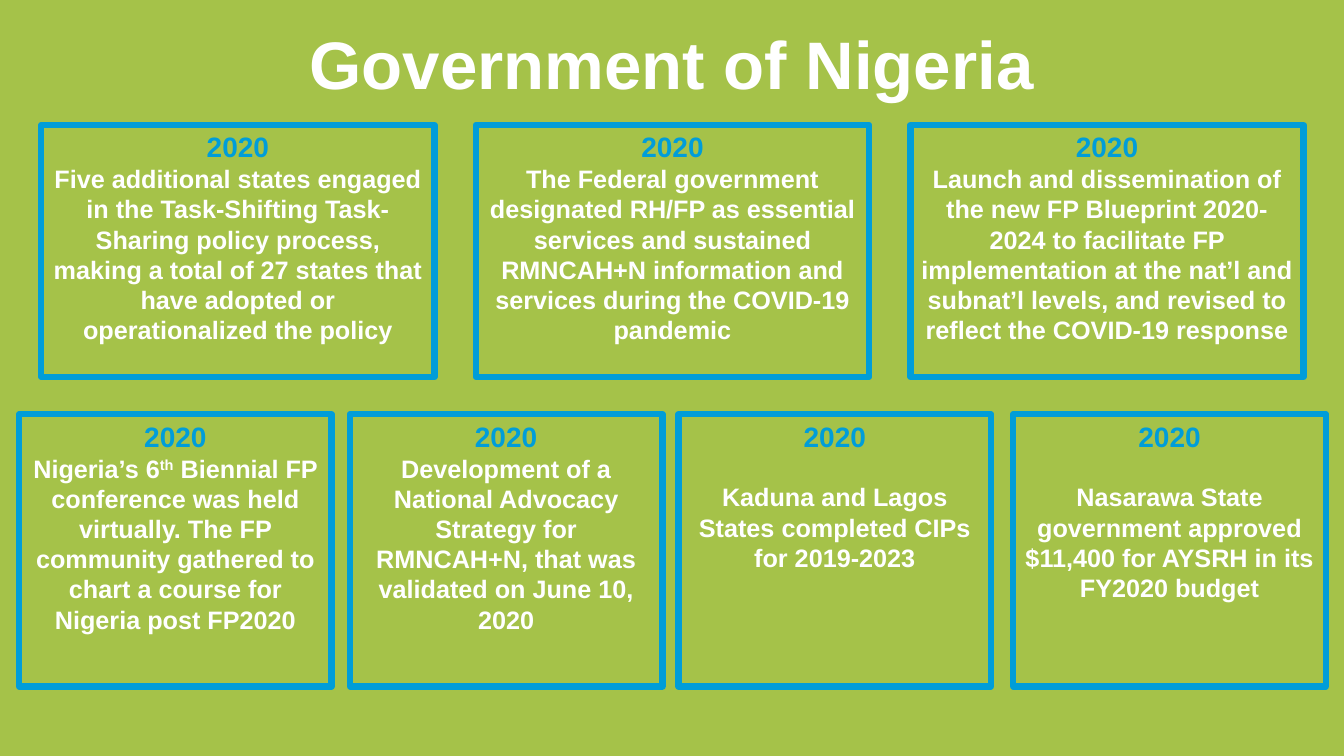
from pptx import Presentation
from pptx.dml.color import RGBColor
from pptx.enum.shapes import MSO_SHAPE
from pptx.enum.text import MSO_ANCHOR, PP_ALIGN
from pptx.util import Inches, Pt

GREEN, BLUE, WHITE = "A5C249", "009DD9", "FFFFFF"
BLANK_LINE = 20.7  # height in points of one 18 pt line


def rgb(color):
    return RGBColor.from_string(color)


def add_run(p, text, size, color):
    r = p.add_run()
    r.text = text
    r.font.name = "Arial"
    r.font.size = Pt(size)
    r.font.bold = True
    r.font.color.rgb = rgb(color)
    return r


prs = Presentation()
prs.slide_width, prs.slide_height = Inches(13.33), Inches(7.5)
s = prs.slides.add_slide(prs.slide_layouts[6])
s.background.fill.solid()
s.background.fill.fore_color.rgb = rgb(GREEN)

title = s.shapes.add_textbox(Inches(2.93), Inches(0.17), Inches(7.47), Inches(0.91))
title.text_frame.word_wrap = True
p = title.text_frame.paragraphs[0]
p.alignment = PP_ALIGN.CENTER
add_run(p, "Government of Nigeria", 48, WHITE)

# Each card: left edge, space above the body in points, body runs.
# Every second body run is superscript.
top_cards = [
    (0.41, 0, ["Five additional states engaged in the Task-Shifting Task-Sharing policy "
               "process, making a total of 27 states that have adopted or "
               "operationalized the policy"]),
    (4.72, 0, ["The Federal government designated RH/FP as essential services and "
               "sustained RMNCAH+N information and services during the COVID-19 pandemic"]),
    (9.03, 0, ["Launch and dissemination of the new FP Blueprint 2020-2024 to facilitate "
               "FP implementation at the nat’l and subnat’l levels, and revised to "
               "reflect the COVID-19 response"]),
]
bottom_cards = [
    (0.19, 0, ["Nigeria’s 6", "th", " Biennial FP conference was held virtually. The FP "
               "community gathered to chart a course for Nigeria post FP2020"]),
    (3.47, 0, ["Development of a National Advocacy Strategy for RMNCAH+N, that was "
               "validated on June 10, 2020"]),
    (6.73, BLANK_LINE, ["Kaduna and Lagos States completed CIPs for 2019-2023"]),
    (10.05, BLANK_LINE, ["Nasarawa State government approved $11,400 for AYSRH in its "
                         "FY2020 budget"]),
]
rows = [(1.24, 3.9, 2.5, top_cards), (4.11, 3.1, 2.7, bottom_cards)]

for top, width, height, cards in rows:
    for left, gap, body in cards:
        sp = s.shapes.add_shape(MSO_SHAPE.RECTANGLE, Inches(left), Inches(top),
                                Inches(width), Inches(height))
        sp.shadow.inherit = False
        sp.fill.solid()
        sp.fill.fore_color.rgb = rgb(GREEN)
        sp.line.color.rgb = rgb(BLUE)
        sp.line.width = Pt(4.5)
        tf = sp.text_frame
        tf.word_wrap = True
        tf.vertical_anchor = MSO_ANCHOR.TOP
        p = tf.paragraphs[0]
        p.alignment = PP_ALIGN.CENTER
        add_run(p, "2020", 20, BLUE)
        p = tf.add_paragraph()
        p.alignment = PP_ALIGN.CENTER
        p.space_before = Pt(gap)
        for i, text in enumerate(body):
            r = add_run(p, text, 18, WHITE)
            if i % 2:
                r._r.get_or_add_rPr().set("baseline", "30000")

prs.save("out.pptx")
